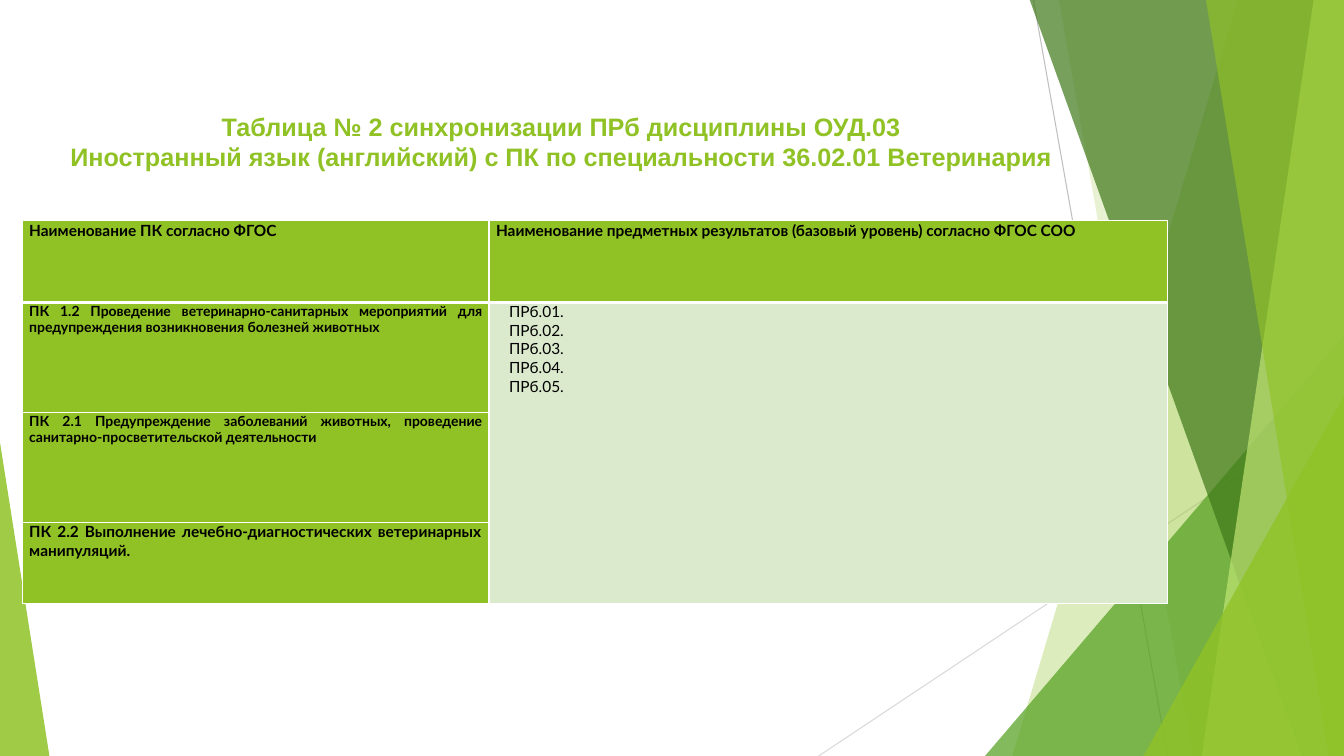
from dataclasses import dataclass

from lxml import etree
from pptx import Presentation
from pptx.dml.color import RGBColor
from pptx.enum import shapes, text
from pptx.oxml import ns
from pptx.util import Inches, Pt


@dataclass(frozen=True)
class Theme:
    """Colours, fonts and type sizes of the slide."""
    green: str = "90C226"
    leaf: str = "54A021"
    forest: str = "3F7819"
    lime: str = "C0E474"
    pale: str = "DBE9CD"
    white: str = "FFFFFF"
    black: str = "000000"
    dark_ray: str = "BFBFBF"
    light_ray: str = "D9D9D9"
    title_font: str = "Arial"
    table_font: str = "Lato"
    title_size: int = 18
    body_size: int = 11
    small_size: int = 10


THEME = Theme()
WIDTH, HEIGHT, TOP = 13.33, 7.5, -0.01

TITLE = [
    "Таблица № 2 синхронизации ПРб дисциплины ОУД.03 ",
    "Иностранный язык (английский) с ПК по специальности 36.02.01 Ветеринария ",
]
HEADERS = [
    "Наименование ПК согласно ФГОС",
    "Наименование предметных результатов (базовый уровень) согласно ФГОС СОО",
]
COMPETENCES = [
    ("ПК 1.2 Проведение ветеринарно-санитарных мероприятий для "
     "предупреждения возникновения болезней животных", THEME.small_size),
    ("ПК 2.1 Предупреждение заболеваний животных, проведение "
     "санитарно-просветительской деятельности", THEME.small_size),
    ("ПК 2.2 Выполнение лечебно-диагностических ветеринарных манипуляций.",
     THEME.body_size),
]
RESULTS = [f"ПРб.{number:02}." for number in range(1, 6)]


def rgb(color):
    """Turn a hex string into a colour."""
    return RGBColor.from_string(color)


def paint(shape, color, opacity):
    """Fill a decoration with a translucent colour and no outline."""
    shape.shadow.inherit = False
    shape.line.fill.background()
    shape.fill.solid()
    shape.fill.fore_color.rgb = rgb(color)
    tint = shape.fill._xPr.find(ns.qn("a:solidFill"))[0]
    etree.SubElement(tint, ns.qn("a:alpha"), val=str(opacity * 1000))


def add_ray(slide, start, end, color):
    """Draw a thin background line."""
    ends = [Inches(value) for value in (*start, *end)]
    ray = slide.shapes.add_connector(shapes.MSO_CONNECTOR.STRAIGHT, *ends)
    ray.line.color.rgb = rgb(color)
    ray.line.width = Pt(0.75)
    etree.SubElement(ray._element.spPr, ns.qn("a:effectLst"))


def add_facet(slide, top_left, bottom_left, color, opacity):
    """Draw a full-height facet that reaches the right edge."""
    corners = [(top_left, TOP), (WIDTH, TOP), (WIDTH, HEIGHT), (bottom_left, HEIGHT)]
    points = [(Inches(x), Inches(y)) for x, y in corners]
    outline = slide.shapes.build_freeform(*points[0])
    outline.add_line_segments(points[1:], close=True)
    paint(outline.convert_to_shape(), color, opacity)


def add_corner(slide, left, top, width, apex, color, opacity):
    """Draw a triangle standing on the bottom edge."""
    corner = slide.shapes.add_shape(
        shapes.MSO_SHAPE.ISOSCELES_TRIANGLE,
        Inches(left), Inches(top), Inches(width), Inches(HEIGHT - top))
    corner.adjustments[0] = apex
    paint(corner, color, opacity)


def write(frame, lines, font, size, color, bold, align, margin=0, indent=0):
    """Write paragraphs and format their runs."""
    frame.text = "\n".join(lines)
    for paragraph in frame.paragraphs:
        paragraph.alignment = align
        properties = paragraph._p.get_or_add_pPr()
        properties.set("marL", str(Inches(margin)))
        properties.set("indent", str(Inches(indent)))
        for run in paragraph.runs:
            run.font.name = font
            run.font.size = Pt(size)
            run.font.bold = bold
            run.font.color.rgb = rgb(color)


def add_title(slide):
    """Add the two-line heading."""
    heading = slide.shapes.add_textbox(
        Inches(0.05), Inches(1.05), Inches(10.61), Inches(0.71))
    frame = heading.text_frame
    frame.word_wrap = False
    frame.vertical_anchor = text.MSO_ANCHOR.MIDDLE
    write(frame, TITLE, THEME.title_font, THEME.title_size, THEME.green, True,
          text.PP_ALIGN.CENTER, indent=0.49)


def style_cell(cell, color, top, bottom):
    """Set the fill, margins and white borders of a cell."""
    cell.margin_left = cell.margin_right = Inches(0.07)
    cell.margin_top = cell.margin_bottom = 0
    cell.fill.solid()
    cell.fill.fore_color.rgb = rgb(color)
    properties = cell._tc.get_or_add_tcPr()
    sides = {"lnL": 1, "lnR": 1, "lnT": top, "lnB": bottom}
    for index, (side, points) in enumerate(sides.items()):
        border = etree.Element(ns.qn(f"a:{side}"), w=str(Pt(points)))
        fill = etree.SubElement(border, ns.qn("a:solidFill"))
        etree.SubElement(fill, ns.qn("a:srgbClr"), val=THEME.white)
        properties.insert(index, border)


def write_cell(cell, lines, size=THEME.body_size, bold=True,
               align=text.PP_ALIGN.JUSTIFY, margin=0):
    """Write black table text."""
    write(cell.text_frame, lines, THEME.table_font, size, THEME.black, bold,
          align, margin)


def add_competence_table(slide):
    """Add the table that matches competences with subject results."""
    widths, heights = [4.63, 6.73], [0.81, 1.09, 1.09, 0.81]
    table = slide.shapes.add_table(
        len(heights), len(widths), Inches(0.22), Inches(2.19),
        Inches(sum(widths)), Inches(sum(heights))).table
    for column, width in zip(table.columns, widths):
        column.width = Inches(width)
    for index, height in enumerate(heights):
        table.rows[index].height = Inches(height)
        for column in range(len(widths)):
            color = THEME.pale if index and column else THEME.green
            style_cell(table.cell(index, column), color,
                       top=3 if index == 1 else 1, bottom=3 if index == 0 else 1)
    aligns = [text.PP_ALIGN.JUSTIFY, text.PP_ALIGN.LEFT]
    for column, (header, align) in enumerate(zip(HEADERS, aligns)):
        write_cell(table.cell(0, column), [header], align=align)
    for index, (competence, size) in enumerate(COMPETENCES, start=1):
        write_cell(table.cell(index, 0), [competence], size)
    results = table.cell(1, 1)
    results.merge(table.cell(len(COMPETENCES), 1))
    write_cell(results, RESULTS, bold=False, margin=0.13)


def add_backdrop(slide):
    """Draw the green facets from back to front."""
    add_ray(slide, (10.25, 0), (11.58, HEIGHT), THEME.dark_ray)
    add_ray(slide, (WIDTH, 4.03), (8.12, HEIGHT), THEME.light_ray)
    add_facet(slide, 12.28, 10.04, THEME.green, 30)
    add_facet(slide, 10.5, 11.83, THEME.green, 20)
    add_corner(slide, 9.77, 3.33, 3.56, 1, THEME.leaf, 72)
    add_facet(slide, 10.21, 12.91, THEME.forest, 70)
    add_facet(slide, 13.03, 11.92, THEME.lime, 70)
    add_facet(slide, 11.96, 13.18, THEME.green, 65)
    add_corner(slide, 11.34, 3.93, 1.99, 1, THEME.green, 80)
    add_corner(slide, 0, 4.39, 0.49, 0, THEME.green, 85)


def main():
    """Build and save the slide."""
    deck = Presentation()
    deck.slide_width, deck.slide_height = Inches(WIDTH), Inches(HEIGHT)
    slide = deck.slides.add_slide(deck.slide_layouts[6])
    add_backdrop(slide)
    add_competence_table(slide)
    add_title(slide)
    deck.save("out.pptx")


if __name__ == "__main__":
    main()
